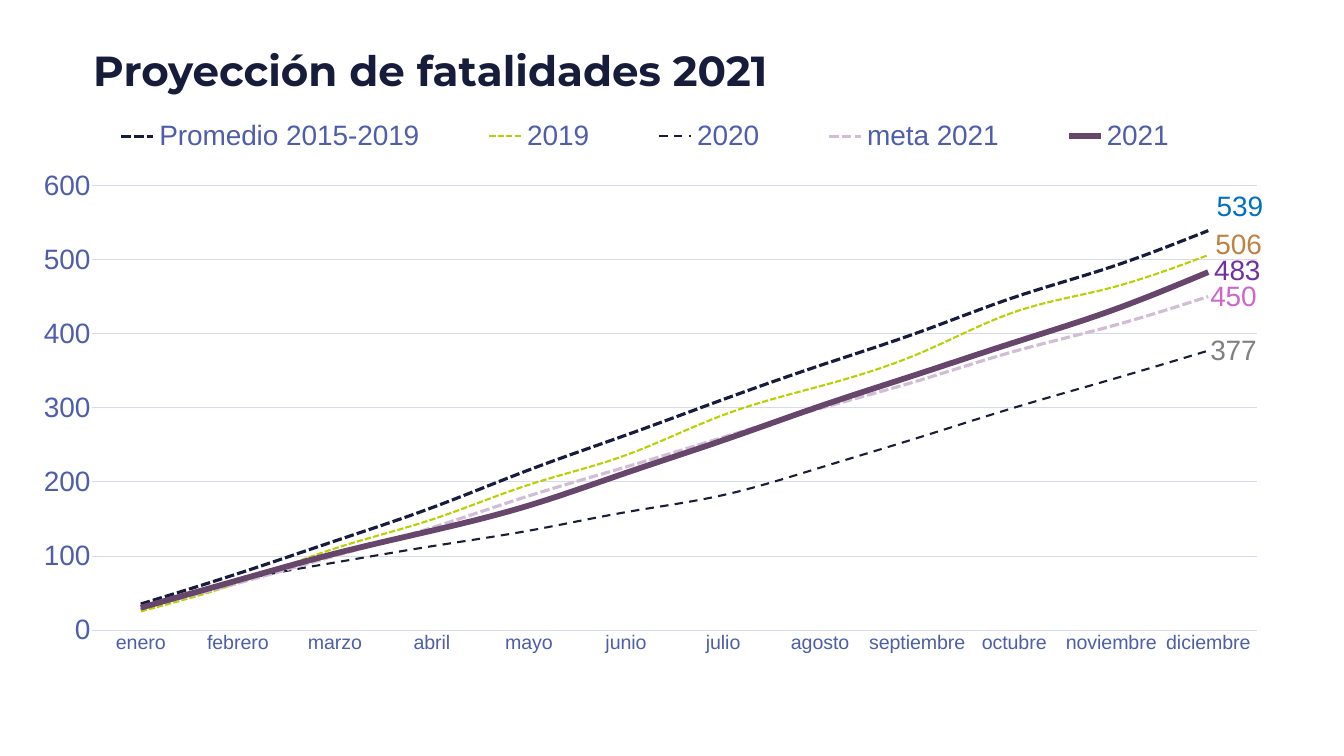
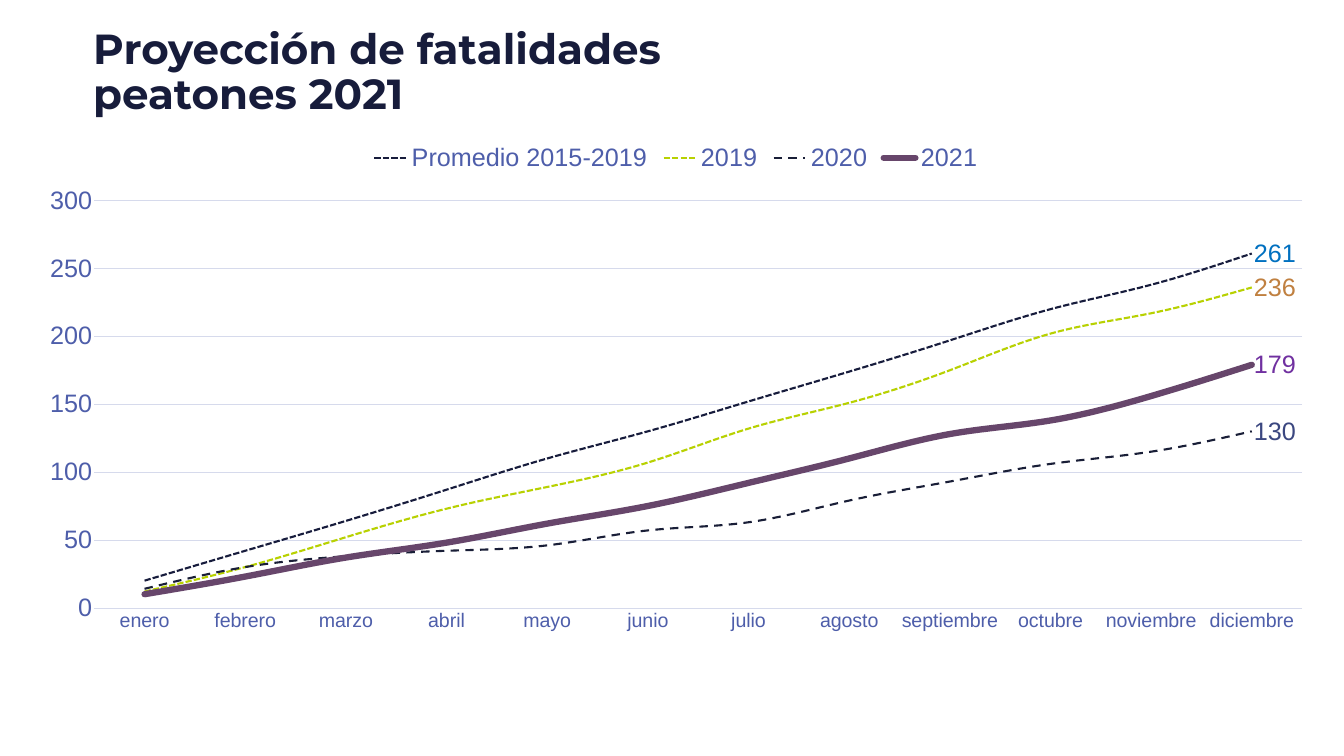
from dataclasses import dataclass

from pptx import Presentation
from pptx import util as u
from pptx.chart.data import CategoryChartData
from pptx.dml.color import RGBColor
from pptx.enum import chart as charts
from pptx.enum import dml, text
from pptx.oxml import parse_xml
from pptx.oxml.ns import nsdecls


@dataclass(frozen=True)
class Theme:
    """Colours, fonts and type sizes shared by the slides."""
    title_font: str = "Montserrat"
    chart_font: str = "Arial"
    title_size: int = 60
    month_size: int = 28
    title: str = "171C3B"
    chart_text: str = "22294A"
    axis_text: str = "4E5EAA"
    grid: str = "D6DAEC"


@dataclass(frozen=True)
class LineStyle:
    """Name, line look and end-label colour of one series."""
    name: str
    color: str
    width: float
    label_color: str
    dash: dml.MSO_LINE = None
    cap: str = "flat"


@dataclass(frozen=True)
class Frame:
    """A rectangle in inches."""
    left: float
    top: float
    width: float
    height: float

    def lengths(self):
        """Return the rectangle as slide lengths."""
        return [u.Inches(n) for n in (self.left, self.top, self.width, self.height)]

    def within(self, outer):
        """Return this rectangle as fractions of an outer one."""
        return ((self.left - outer.left) / outer.width, (self.top - outer.top) / outer.height,
                self.width / outer.width, self.height / outer.height)


THEME = Theme()
MONTHS = ("enero", "febrero", "marzo", "abril", "mayo", "junio", "julio", "agosto",
          "septiembre", "octubre", "noviembre", "diciembre")
SHORT_DASH, LONG_DASH = dml.MSO_LINE.SQUARE_DOT, dml.MSO_LINE.DASH


def average(width):
    """Return the style of the five-year average."""
    return LineStyle("Promedio 2015-2019", "171C3C", width, "0070C0", SHORT_DASH)


def year_2020(label_color):
    """Return the style of the 2020 line."""
    return LineStyle("2020", "191E37", 3, label_color, LONG_DASH)


def year_2021(width, cap):
    """Return the style of the 2021 line."""
    return LineStyle("2021", "67466B", width, "7030A0", cap=cap)


YEAR_2019 = LineStyle("2019", "B8D101", 3, "C08040", SHORT_DASH)
TARGET = LineStyle("meta 2021", "D1BDD4", 4.5, "CC66CC", SHORT_DASH)


def style_font(font, name, size, color, bold=False):
    """Set the name, size, colour and weight of a font."""
    font.name, font.size, font.bold = name, u.Pt(size), bold
    font.color.rgb = RGBColor.from_string(color)


def style_line(line, color, width):
    """Set the colour and width of a line."""
    line.color.rgb = RGBColor.from_string(color)
    line.width = u.Pt(width)


def manual_layout(mode, **values):
    """Build a chart layout element from named fractions."""
    target = '<c:layoutTarget val="inner"/>' if mode == "inner" else ""
    modes = "" if mode == "offset" else '<c:xMode val="edge"/><c:yMode val="edge"/>'
    parts = "".join(f'<c:{key} val="{value:.4f}"/>' for key, value in values.items())
    return parse_xml(f'<c:layout {nsdecls("c")}><c:manualLayout>{target}{modes}{parts}'
                     '</c:manualLayout></c:layout>')


def place(element, layout, index):
    """Replace the layout of a chart element."""
    for old in element.xpath("./c:layout"):
        element.remove(old)
    element.insert(index, layout)


def add_title_slide(presentation, title, top):
    """Add a slide with a bottom-anchored title."""
    slide = presentation.slides.add_slide(presentation.slide_layouts[5])
    shape = slide.shapes.title
    shape.left, shape.top, shape.width, shape.height = Frame(1.8, top, 23.64, 1.94).lengths()
    frame = shape.text_frame
    frame.text = title
    frame.word_wrap = True
    frame.auto_size = text.MSO_AUTO_SIZE.NONE
    frame.vertical_anchor = text.MSO_ANCHOR.BOTTOM
    frame.margin_left = frame.margin_right = u.Inches(0.05)
    frame.margin_top = frame.margin_bottom = u.Inches(0.05)
    paragraph = frame.paragraphs[0]
    paragraph.alignment = text.PP_ALIGN.LEFT
    paragraph.line_spacing = 0.9
    for run in paragraph.runs:
        style_font(run.font, THEME.title_font, THEME.title_size, THEME.title, True)
    return slide


def style_axes(chart, size, step, maximum):
    """Format both axes and the horizontal grid."""
    months, values = chart.category_axis, chart.value_axis
    for axis, axis_size in ((months, THEME.month_size), (values, size)):
        axis.major_tick_mark = axis.minor_tick_mark = charts.XL_TICK_MARK.NONE
        style_font(axis.tick_labels.font, THEME.chart_font, axis_size, THEME.axis_text)
    months.has_major_gridlines = False
    style_line(months.format.line, THEME.grid, 0.75)
    values.minimum_scale, values.maximum_scale, values.major_unit = 0, maximum, step
    values.has_major_gridlines = True
    style_line(values.major_gridlines.format.line, THEME.grid, 0.75)
    values.format.line.fill.background()


def style_series(series, style, size, offset):
    """Format a series and label its last month."""
    series.smooth = True
    line = series.format.line
    style_line(line, style.color, style.width)
    if style.dash:
        line.dash_style = style.dash
    series._element.xpath("./c:spPr/a:ln")[0].set("cap", style.cap)
    series.data_labels.show_value = False
    label = series.points[len(MONTHS) - 1].data_label
    style_font(label.font, THEME.chart_font, size, style.label_color)
    label.position = charts.XL_LABEL_POSITION.RIGHT
    if offset:
        element = series._element.xpath("./c:dLbls/c:dLbl")[0]
        place(element, manual_layout("offset", x=offset[0], y=offset[1]), 1)


def add_line_chart(slide, frame, plot, size, step, maximum, lines, legend=None, offsets=None):
    """Add a smoothed monthly line chart with a legend on top."""
    data = CategoryChartData()
    data.categories = MONTHS
    for style, values in lines:
        data.add_series(style.name, values)
    chart = slide.shapes.add_chart(charts.XL_CHART_TYPE.LINE, *frame.lengths(), data).chart
    chart.has_title = False
    style_font(chart.font, THEME.chart_font, size, THEME.chart_text)
    chart.plots[0].vary_by_categories = False
    style_axes(chart, size, step, maximum)
    chart.has_legend = True
    chart.legend.position = charts.XL_LEGEND_POSITION.TOP
    chart.legend.include_in_layout = False
    style_font(chart.legend.font, THEME.chart_font, size, THEME.axis_text)
    if legend:
        box = dict(zip("xywh", legend.within(frame)))
        place(chart.legend._element, manual_layout("edge", **box), 1)
    box = dict(zip("xywh", plot.within(frame)))
    place(chart._chartSpace.chart.plotArea, manual_layout("inner", **box), 0)
    for series, (style, _) in zip(chart.plots[0].series, lines):
        style_series(series, style, size, (offsets or {}).get(style.name))


def add_all_fatalities(presentation):
    """Add the projection of all fatalities."""
    slide = add_title_slide(presentation, "Proyección de fatalidades 2021", 0)
    lines = (
        (average(4.5), (35, 76, 120, 165, 216, 263, 311, 357, 401, 449, 490, 539)),
        (YEAR_2019, (25, 63, 110, 149, 196, 236, 290, 329, 372, 429, 462, 506)),
        (year_2020("808080"), (28, 66, 91, 113, 134, 159, 182, 219, 259, 300, 338, 377)),
        (TARGET, (29, 63, 100, 138, 181, 220, 260, 299, 336, 376, 410, 450)),
        (year_2021(8.25, "flat"), (30, 67, 103, 134, 168, 212, 256, 302, 345, 388, 431, 483)),
    )
    offsets = {"Promedio 2015-2019": (0.005, -0.043), "2019": (0.004, -0.018),
               "2021": (0.003, -0.003)}
    add_line_chart(slide, Frame(0.33, 2.25, 25.1, 10.94), Frame(1.83, 3.68, 23.11, 8.82),
                   40, 100, 600, lines, Frame(1.2, 2.25, 23.2, 0.9), offsets)


def add_pedestrian_fatalities(presentation):
    """Add the projection of pedestrian fatalities."""
    slide = add_title_slide(presentation, "Proyección de fatalidades\vpeatones 2021", 0.47)
    lines = (
        (average(3), (20, 42, 64, 87, 110, 130, 152, 174, 197, 220, 238, 261)),
        (YEAR_2019, (12, 30, 52, 73, 89, 107, 132, 151, 175, 202, 217, 236)),
        (year_2020("3B4780"), (14, 30, 38, 42, 46, 57, 63, 79, 93, 106, 115, 130)),
        (year_2021(9, "rnd"), (10, 23, 37, 48, 62, 75, 92, 110, 128, 138, 156, 179)),
    )
    add_line_chart(slide, Frame(0.47, 2.68, 25.88, 10.05), Frame(1.87, 3.98, 23.97, 8.08),
                   36, 50, 300, lines)


def main():
    """Build and save the presentation."""
    presentation = Presentation()
    presentation.slide_width, presentation.slide_height = u.Inches(26.67), u.Inches(15)
    add_all_fatalities(presentation)
    add_pedestrian_fatalities(presentation)
    presentation.save("out.pptx")


if __name__ == "__main__":
    main()
